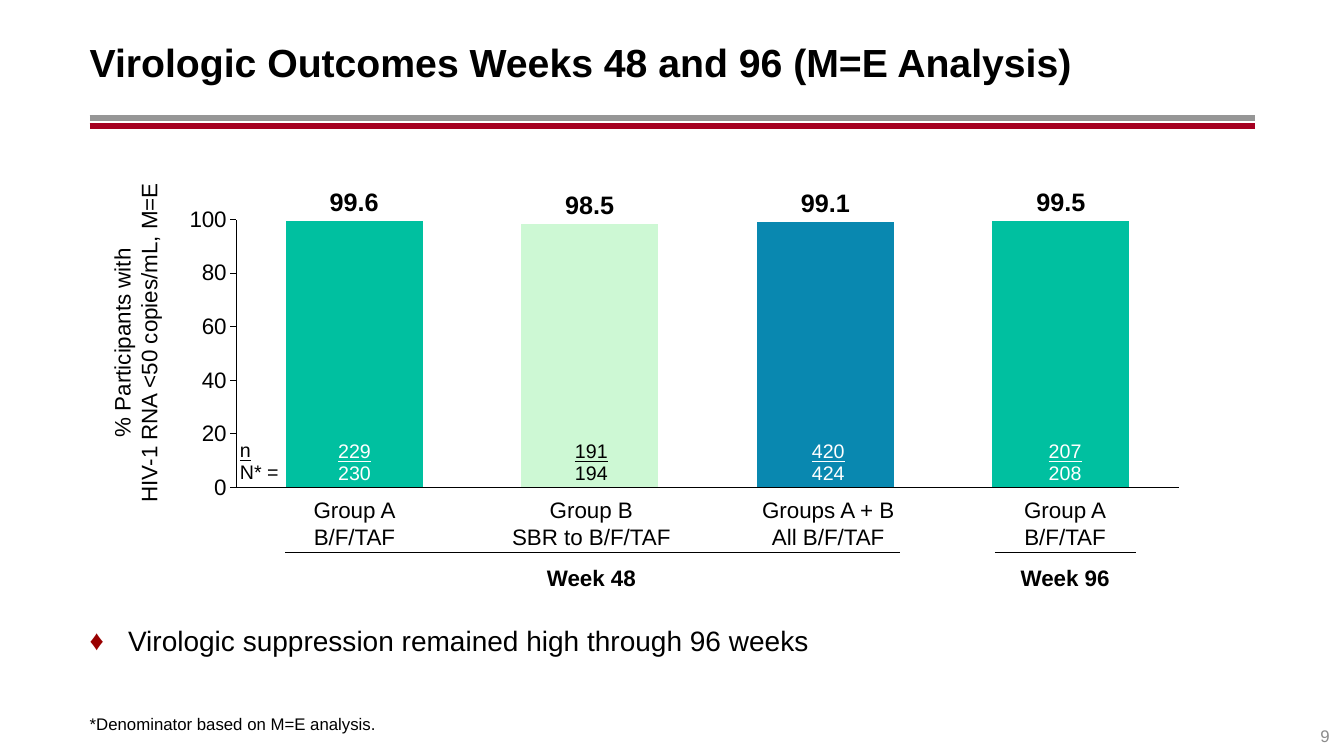
from lxml.etree import SubElement
from pptx import Presentation
from pptx.chart.data import CategoryChartData
from pptx.dml.color import RGBColor
from pptx.enum.chart import XL_CHART_TYPE, XL_LABEL_POSITION, XL_TICK_LABEL_POSITION, XL_TICK_MARK
from pptx.enum.shapes import MSO_CONNECTOR
from pptx.enum.text import MSO_ANCHOR, MSO_AUTO_SIZE, PP_ALIGN
from pptx.oxml.ns import qn
from pptx.util import Inches, Pt

BLACK = RGBColor(0x00, 0x00, 0x00)
WHITE = RGBColor(0xFF, 0xFF, 0xFF)
GREY = RGBColor(0x96, 0x96, 0x96)
PALE = RGBColor(0x8C, 0x8C, 0x8C)
RED = RGBColor(0xA5, 0x00, 0x21)
TEAL = RGBColor(0x00, 0xC0, 0xA0)
MINT = RGBColor(0xCD, 0xF8, 0xD4)
BLUE = RGBColor(0x09, 0x88, 0xB0)
FONT = "Arial"

deck = Presentation()
deck.slide_width, deck.slide_height = Inches(13.33), Inches(7.5)
COL = deck.slide_width / 160
ROW = deck.slide_height / 90
LEFT, WIDE = 10.68, 138.7
slide = deck.slides.add_slide(deck.slide_layouts[3])
shapes = slide.shapes


def grid(x, y, w, h):
    return int(x * COL), int(y * ROW), int(w * COL), int(h * ROW)


def write(text, place, size=16, color=BLACK, bold=False, under=False, space=1.0,
          align=PP_ALIGN.CENTER, anchor=MSO_ANCHOR.MIDDLE, holder=None):
    box = holder or shapes.add_textbox(*grid(*place))
    box.left, box.top, box.width, box.height = grid(*place)
    frame = box.text_frame
    frame.text = text
    frame.word_wrap = True
    frame.auto_size = MSO_AUTO_SIZE.NONE
    frame.vertical_anchor = anchor
    frame.margin_left = frame.margin_right = frame.margin_top = frame.margin_bottom = 0
    for row, para in enumerate(frame.paragraphs):
        para.alignment = align
        para.line_spacing = space
        para.space_before = Pt(0)
        font = para.runs[0].font
        font.name, font.size, font.bold = FONT, Pt(size), bold
        font.color.rgb = color
        font.underline = under and row == 0
    return box


title, note, foot = slide.placeholders
write("Virologic Outcomes Weeks 48 and 96 (M=E Analysis)", (LEFT, 2.16, WIDE, 10.3),
      size=28, bold=True, align=PP_ALIGN.LEFT, holder=title)
title.fill.solid()
title.fill.fore_color.rgb = WHITE
write("Virologic suppression remained high through 96 weeks", (LEFT, 74.28, WIDE, 5.4),
      size=20, align=PP_ALIGN.LEFT, anchor=MSO_ANCHOR.TOP, holder=note)
write("*Denominator based on M=E analysis.", (LEFT, 81.96, WIDE, 5.4),
      size=12, align=PP_ALIGN.LEFT, anchor=MSO_ANCHOR.BOTTOM, holder=foot)
write("9", (149.3, 85.2, 9, 4.8), size=12, color=PALE, align=PP_ALIGN.RIGHT)

props = note.text_frame.paragraphs[0]._p.get_or_add_pPr()
props.set("marL", str(Inches(0.38)))
props.set("indent", str(-Inches(0.38)))
SubElement(SubElement(props, qn("a:buClr")), qn("a:srgbClr"), val="990000")
SubElement(props, qn("a:buFont"), typeface=FONT)
SubElement(props, qn("a:buChar"), char="♦")
props = foot.text_frame.paragraphs[0]._p.get_or_add_pPr()
props.set("marL", "0")
props.set("indent", "0")
SubElement(props, qn("a:buNone"))

for start, end, y, color, width in (
    (LEFT, LEFT + WIDE, 14.04, GREY, 4.25),
    (LEFT, LEFT + WIDE, 15, RED, 4.25),
    (33.96, 107.16, 65.76, BLACK, 0.75),
    (118.44, 135.24, 65.76, BLACK, 0.75),
):
    x, top, span, flat = grid(start, y, end - start, 0)
    rule = shapes.add_connector(MSO_CONNECTOR.STRAIGHT, x, top, x + span, top)
    rule.line.color.rgb = color
    rule.line.width = Pt(width)
    SubElement(rule._element.spPr, qn("a:effectLst"))

data = CategoryChartData()
data.categories = ["1", "2", "3", "4"]
data.add_series("Series 1", (99.6, 98.5, 99.1, 99.5))
chart = shapes.add_chart(XL_CHART_TYPE.COLUMN_CLUSTERED,
                         *grid(19.68, 20.76, 120.72, 41.4), data).chart
chart.has_legend = chart.has_title = False
chart.font.name, chart.font.size = FONT, Pt(16)
chart.font.color.rgb = BLACK

across, up = chart.category_axis, chart.value_axis
for axis in (across, up):
    axis.has_major_gridlines = False
    axis.minor_tick_mark = XL_TICK_MARK.NONE
    axis.format.line.color.rgb = BLACK
    axis.format.line.width = Pt(0.75)
across.major_tick_mark = XL_TICK_MARK.NONE
across.tick_label_position = XL_TICK_LABEL_POSITION.NONE
up.major_tick_mark = XL_TICK_MARK.OUTSIDE
up.minimum_scale, up.maximum_scale, up.major_unit = 0, 100, 20

plot = chart.plots[0]
plot.gap_width = 72
plot.vary_by_categories = False
bars = plot.series[0]
for order, color in enumerate((TEAL, MINT, BLUE, TEAL)):
    fill = bars.points[order].format.fill
    fill.solid()
    fill.fore_color.rgb = color
labels = bars.data_labels
labels.show_value = True
labels.position = XL_LABEL_POSITION.OUTSIDE_END
labels.number_format, labels.number_format_is_linked = "#,##0.0", False
labels.font.name, labels.font.size, labels.font.bold = FONT, Pt(18), True
labels.font.color.rgb = BLACK

area = chart._chartSpace.chart.plotArea
for old in area.findall(qn("c:layout")):
    area.remove(old)
layout = area.makeelement(qn("c:layout"))
area.insert(0, layout)
manual = SubElement(layout, qn("c:manualLayout"))
for tag, value in (("layoutTarget", "inner"), ("xMode", "edge"), ("yMode", "edge"),
                   ("x", "0.07"), ("y", "0.13"), ("w", "0.93"), ("h", "0.77")):
    SubElement(manual, qn("c:" + tag), val=value)

side = write("% Participants with\nHIV-1 RNA <50 copies/mL, M=E", (-4.32, 36.96, 40.8, 7.68))
side.rotation = 270
write("n\nN* =", (28.56, 52.2, 9.24, 5.64), size=14, under=True, space=0.9, align=PP_ALIGN.LEFT)

for order, (count, color, name, week) in enumerate((
    ("229\n230", WHITE, "Group A\nB/F/TAF", None),
    ("191\n194", BLACK, "Group B\nSBR to B/F/TAF", "Week 48"),
    ("420\n424", WHITE, "Groups A + B\nAll B/F/TAF", None),
    ("207\n208", WHITE, "Group A\nB/F/TAF", "Week 96"),
)):
    mid = 42.2 + 28.2 * order
    write(count, (mid - 7, 52.32, 14, 5.64), size=14, color=color, under=True, space=0.9)
    write(name, (mid - 10.8, 58.44, 21.6, 7.68))
    if week:
        write(week, (mid - 16, 66.48, 32, 4.44), bold=True)

deck.save("out.pptx")
